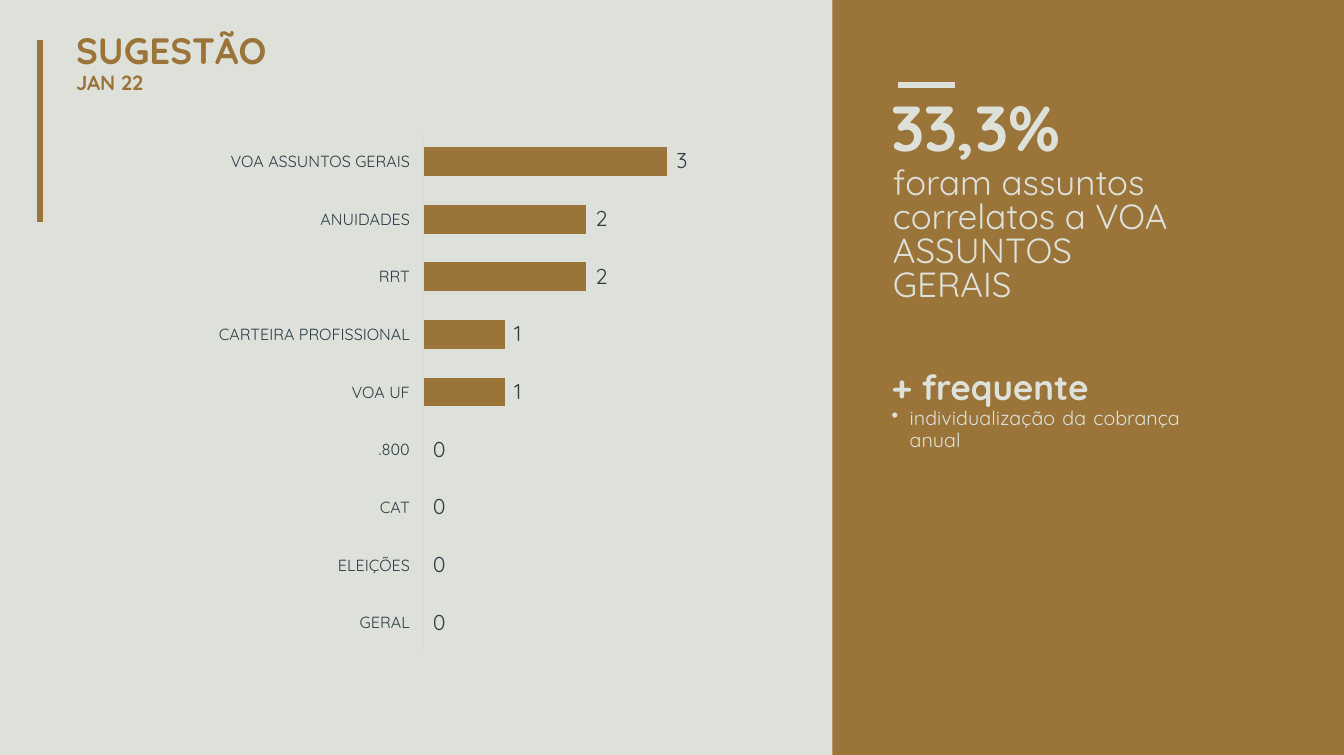
import pptx
import pptx.util
import pptx.dml.color
import pptx.enum.shapes
import pptx.enum.text
import pptx.oxml
import lxml.etree

Inches = pptx.util.Inches
Pt = pptx.util.Pt
RGB = pptx.dml.color.RGBColor
Align = pptx.enum.text.PP_ALIGN
Anchor = pptx.enum.text.MSO_ANCHOR
NS = "http://schemas.openxmlformats.org/drawingml/2006/main"

GOLD = RGB(0x9A, 0x74, 0x39)
PALE = RGB(0xDD, 0xE1, 0xDA)
DARK = RGB(0x2E, 0x3D, 0x46)
GRAY = RGB(0xD9, 0xD9, 0xD9)
FONT = "Quicksand"
PLAIN = "{2D5ABB26-0587-4C30-8999-92F81FD0307C}"

TOPICS = [
    ("VOA ASSUNTOS GERAIS", 3),
    ("ANUIDADES", 2),
    ("RRT", 2),
    ("CARTEIRA PROFISSIONAL", 1),
    ("VOA UF", 1),
    (".800", 0),
    ("CAT", 0),
    ("ELEIÇÕES", 0),
    ("GERAL", 0),
]
TITLE = [
    ("SUGESTÃO", dict(size=20.5, bold=True, line=Pt(23.1), before=1.1)),
    ("JAN 22", dict(size=11.5, bold=True, line=Pt(12.3))),
]
NOTES = [
    ("33,3%", dict(size=35.5, bold=True, line=Pt(40.6), before=1.1, left=0.01)),
    ("foram assuntos correlatos a VOA ASSUNTOS GERAIS",
     dict(size=19.5, line=0.81, before=2.5, left=0.02, right=0.7)),
    ("+ frequente", dict(size=19.5, bold=True, line=Pt(22.4), before=35.5, left=0.01)),
    ("individualização da cobrança anual",
     dict(size=11, line=Pt(12.2), left=0.15, right=0.72, hang=0.14,
          bullet="•", align=Align.JUSTIFY)),
]
COLS = [1.61, 0.63, 0.63, 0.63, 0.2]
AXIS, TOP, BASE = 3.29, 1.03, 5.06
STEP = (BASE - TOP) / len(TOPICS)


def write(para, text, size=9, color=DARK, bold=False, align=Align.LEFT,
          line=None, before=0, left=0, right=0, hang=0, bullet=None):
    para.alignment = align
    para.space_before = Pt(before)
    if line:
        para.line_spacing = line
    props = para._p.get_or_add_pPr()
    props.set("marL", str(Inches(left)))
    props.set("marR", str(Inches(right)))
    props.set("indent", str(-Inches(hang)))
    if bullet:
        lxml.etree.SubElement(props, f"{{{NS}}}buChar").set("char", bullet)
    run = para.add_run()
    run.text = text
    font = run.font
    font.name, font.size, font.bold = FONT, Pt(size), bold
    font.color.rgb = color


def block(slide, paras, x, y, w, h, **look):
    frame = slide.shapes.add_textbox(*map(Inches, (x, y, w, h))).text_frame
    frame.word_wrap = True
    frame.margin_left = frame.margin_right = frame.margin_bottom = 0
    frame.margin_top = Inches(0.02)
    for i, (text, style) in enumerate(paras):
        para = frame.add_paragraph() if i else frame.paragraphs[0]
        write(para, text, **{**look, **style})


def rule(slide, x1, y1, x2, y2, color, width):
    line = slide.shapes.add_connector(
        pptx.enum.shapes.MSO_CONNECTOR.STRAIGHT, *map(Inches, (x1, y1, x2, y2)))
    line.line.color.rgb = color
    line.line.width = Pt(width)
    lxml.etree.SubElement(line._element.spPr, f"{{{NS}}}effectLst")


def bars(slide):
    full = sum(n > 0 for _, n in TOPICS)
    none = len(TOPICS) - full
    rows = [STEP / 2] * (2 * full - 1) + [STEP * 1.25] + [STEP] * (none - 1)
    frame = slide.shapes.add_table(
        len(rows), len(COLS), Inches(1.68), Inches(TOP + STEP / 4),
        Inches(sum(COLS)), Inches(sum(rows)))
    table = frame.table
    table.first_row = table.horz_banding = False
    table._tbl.tblPr.find(f"{{{NS}}}tableStyleId").text = PLAIN
    for col, w in zip(table.columns, COLS):
        col.width = Inches(w)
    for row, h in zip(table.rows, rows):
        row.height = Inches(h)
    for cell in table.iter_cells():
        cell.margin_left = cell.margin_right = 0
        cell.margin_top = cell.margin_bottom = 0
        cell.vertical_anchor = Anchor.MIDDLE
        cell.fill.background()
        cell.text_frame.paragraphs[0].font.size = Pt(6)
    for i, (name, n) in enumerate(TOPICS):
        r = 2 * i if n else full - 1 + i
        label, value = table.cell(r, 0), table.cell(r, n + 1)
        if i == full:
            label.margin_top = value.margin_top = Inches(STEP / 4)
        write(label.text_frame.paragraphs[0], name, align=Align.RIGHT, right=0.11)
        for c in range(1, n + 1):
            cell = table.cell(r, c)
            cell.fill.solid()
            cell.fill.fore_color.rgb = GOLD
        write(value.text_frame.paragraphs[0], str(n),
              size=12, left=0.07, line=Pt(14.2))


def main():
    deck = pptx.Presentation()
    deck.slide_width, deck.slide_height = Inches(10.43), Inches(5.86)
    slide = deck.slides.add_slide(deck.slide_layouts[6])
    slide.background.fill.solid()
    slide.background.fill.fore_color.rgb = PALE

    panel = slide.shapes.add_shape(
        pptx.enum.shapes.MSO_SHAPE.RECTANGLE, *map(Inches, (6.46, 0, 3.97, 5.86)))
    panel.shadow.inherit = False
    panel.fill.solid()
    panel.fill.fore_color.rgb = GOLD
    panel.line.fill.background()

    rule(slide, 6.97, 0.66, 7.41, 0.66, PALE, 3.6)
    rule(slide, 0.31, 0.31, 0.31, 1.72, GOLD, 3.6)
    bars(slide)
    rule(slide, AXIS, TOP, AXIS, BASE, GRAY, 0.6)
    for i in range(len(TOPICS) + 1):
        y = TOP + i * STEP
        rule(slide, AXIS - 0.04, y, AXIS, y, GRAY, 0.6)
    block(slide, TITLE, 0.55, 0.22, 5.82, 0.75, color=GOLD, left=0.04)
    block(slide, NOTES, 6.91, 0.69, 2.97, 2.4, color=PALE)
    deck.save("out.pptx")


if __name__ == "__main__":
    main()
